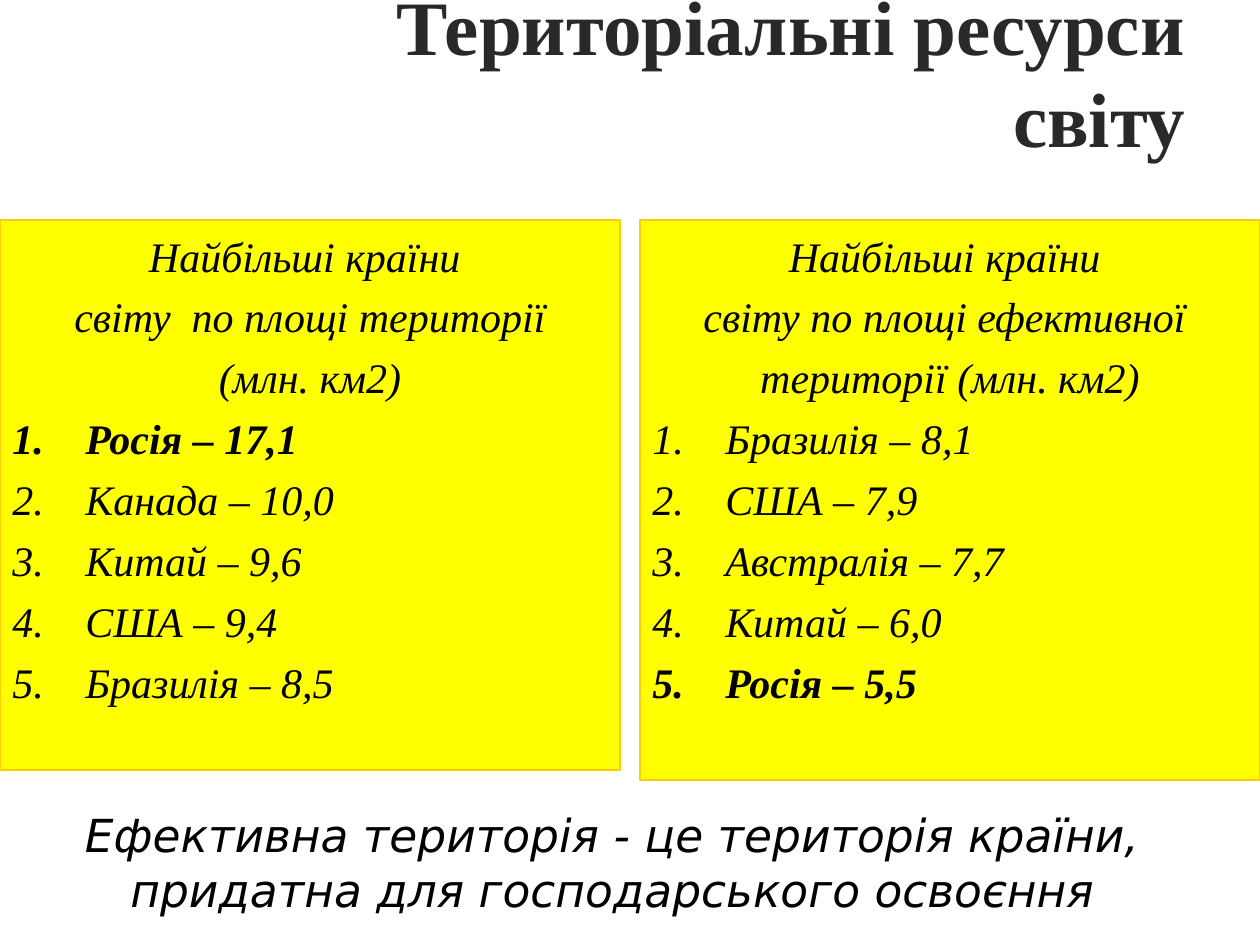
from lxml.etree import SubElement
from pptx import Presentation
from pptx.dml.color import RGBColor
from pptx.enum.shapes import MSO_SHAPE
from pptx.enum.text import MSO_ANCHOR as Anchor, PP_ALIGN as Align
from pptx.oxml.ns import qn
from pptx.util import Emu, Pt

PX = 914400 // 126
SLIDE_WIDTH, SLIDE_HEIGHT = 1260, 945
PANEL_TOP, PANEL_WIDTH = 220, 620
INDENT = 73

BLACK = RGBColor(0x00, 0x00, 0x00)
CHARCOAL = RGBColor(0x29, 0x29, 0x29)
YELLOW = RGBColor(0xFF, 0xFF, 0x00)
AMBER = RGBColor(0xFF, 0xCC, 0x00)

TITLE = dict(name="Times New Roman", size=Pt(44), bold=True)
LISTING = dict(name="Times New Roman", size=Pt(24), italic=True)
NOTE = dict(name="DejaVu Sans", size=Pt(26), italic=True)

# left, height, heading lines, countries, leading country in bold
PANELS = [
    (0, 550,
     ["Найбільші країни ", "світу  по площі території", "(млн. км2)"],
     ["Росія – 17,1", "Канада – 10,0", "Китай – 9,6", "США – 9,4",
      "Бразилія – 8,5"]),
    (640, 560,
     ["Найбільші країни ", "світу по площі ефективної ",
      "території (млн. км2)"],
     ["Бразилія – 8,1", "США – 7,9", "Австралія – 7,7", "Китай – 6,0",
      "Росія – 5,5"]),
]
HIGHLIGHT = "Росія"


def px(*lengths):
    return [Emu(length * PX) for length in lengths]


def write(paragraph, text, style, color, align):
    paragraph.alignment = align
    run = paragraph.add_run()
    run.text = text
    for name, value in style.items():
        setattr(run.font, name, value)
    run.font.color.rgb = color


def set_indent(paragraph, numbered):
    """Hang the paragraph, with an automatic number if asked."""
    properties = paragraph._p.get_or_add_pPr()
    properties.set("marL", str(INDENT * PX))
    properties.set("indent", str(-INDENT * PX))
    if numbered:
        SubElement(properties, qn("a:buFont"), typeface="+mj-lt")
        SubElement(properties, qn("a:buAutoNum"), type="arabicPeriod")
    else:
        SubElement(properties, qn("a:buNone"))


def add_text(slide, box, text, style, color, align, anchor):
    frame = slide.shapes.add_textbox(*px(*box)).text_frame
    frame.word_wrap = True
    frame.vertical_anchor = anchor
    write(frame.paragraphs[0], text, style, color, align)


def add_panel(slide, left, height, heading, countries):
    shape = slide.shapes.add_shape(
        MSO_SHAPE.RECTANGLE, *px(left, PANEL_TOP, PANEL_WIDTH, height))
    shape.shadow.inherit = False
    shape.fill.solid()
    shape.fill.fore_color.rgb = YELLOW
    shape.line.color.rgb = AMBER
    shape.line.width = Pt(1)
    frame = shape.text_frame
    frame.word_wrap = True
    frame.vertical_anchor = Anchor.TOP
    frame.margin_top = Emu(10 * PX)
    for index, text in enumerate(heading + countries):
        numbered = index >= len(heading)
        paragraph = frame.add_paragraph() if index else frame.paragraphs[0]
        set_indent(paragraph, numbered)
        if index:
            paragraph.space_before = Pt(6)
        style = dict(LISTING, bold=text.startswith(HIGHLIGHT))
        write(paragraph, text, style, BLACK,
              Align.LEFT if numbered else Align.CENTER)


def main():
    presentation = Presentation()
    presentation.slide_width, presentation.slide_height = px(
        SLIDE_WIDTH, SLIDE_HEIGHT)
    slide = presentation.slides.add_slide(presentation.slide_layouts[6])
    add_text(slide, (282, 6, 916, 129), "Територіальні ресурси світу",
             TITLE, CHARCOAL, Align.RIGHT, Anchor.MIDDLE)
    for panel in PANELS:
        add_panel(slide, *panel)
    add_text(slide, (0, 801, 1226, 122),
             "Ефективна територія - це територія країни, "
             "придатна для господарського освоєння",
             NOTE, BLACK, Align.CENTER, Anchor.TOP)
    presentation.save("out.pptx")


if __name__ == "__main__":
    main()
